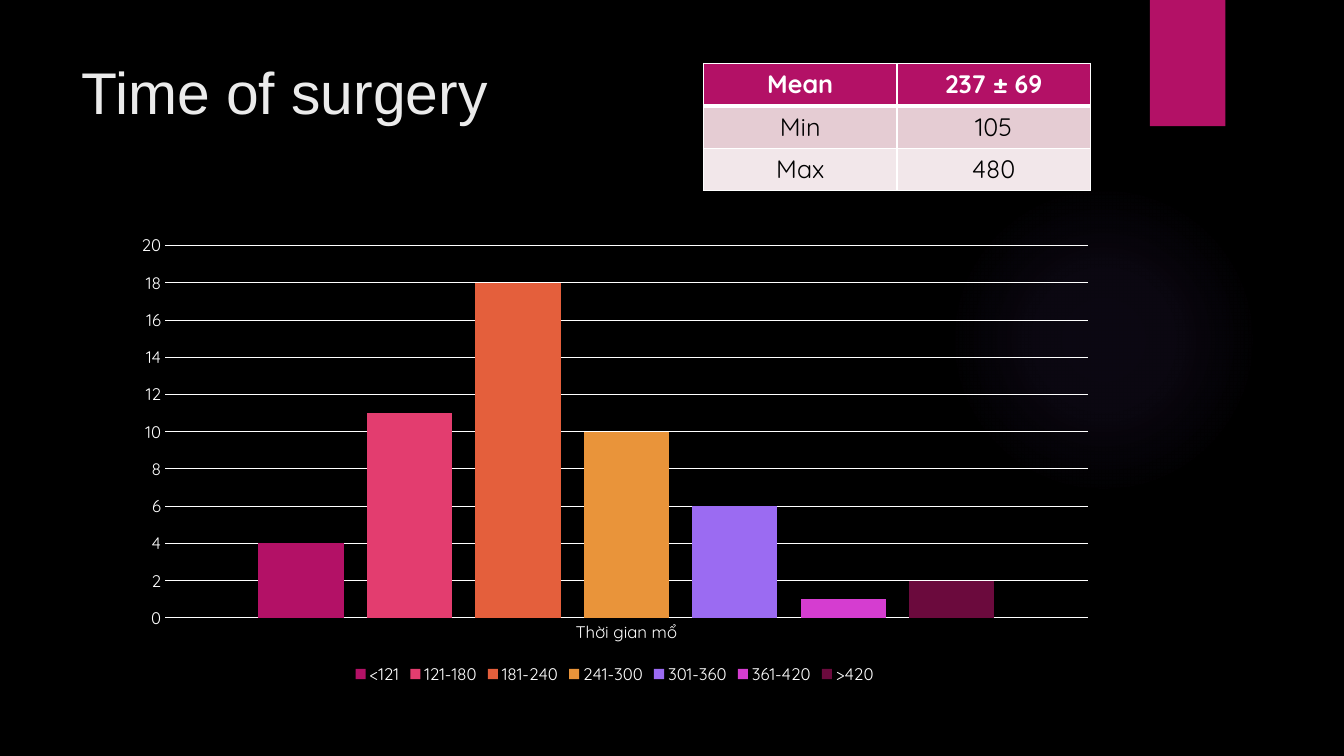
"""Build the slide on time of surgery: title, summary table and column chart."""
from lxml.etree import SubElement
from pptx import Presentation
from pptx.chart.data import CategoryChartData
from pptx.dml.color import RGBColor
from pptx.enum.chart import XL_CHART_TYPE, XL_LEGEND_POSITION, XL_TICK_MARK
from pptx.enum.shapes import MSO_SHAPE
from pptx.enum.text import MSO_ANCHOR, MSO_AUTO_SIZE, PP_ALIGN
from pptx.oxml import parse_xml
from pptx.oxml.ns import nsdecls, qn
from pptx.util import Cm, Pt


class Theme:
    black, white, title = "000000", "FFFFFF", "EBEBEB"
    pink, violet = "B31166", "9B6BF2"
    rows = [pink, "E5CCD3", "F2E7EA"]
    bars = [pink, "E33D6F", "E45F3C", "E9943A", violet, "D53DD0", "6B0A3D"]
    head, body = "Arial", "Quicksand"
    big, mid, small = Pt(42), Pt(18), Pt(12)


def paint(fill, color):
    fill.solid()
    fill.fore_color.rgb = RGBColor.from_string(color)


def style(font, color, **values):
    for key, value in values.items():
        setattr(font, key, value)
    paint(font.fill, color)


deck = Presentation()
deck.slide_width, deck.slide_height = Cm(33.87), Cm(19.05)
slide = deck.slides.add_slide(deck.slide_layouts[5])
shapes = slide.shapes
paint(slide.background.fill, Theme.black)

glow = shapes.add_shape(MSO_SHAPE.OVAL, Cm(23.9), Cm(4.65), Cm(7.82), Cm(7.82))
tab = shapes.add_shape(MSO_SHAPE.RECTANGLE, Cm(28.98), 0, Cm(1.9), Cm(3.18))
for shape in (glow, tab):
    shape.shadow.inherit = False
    shape.line.fill.background()
    paint(shape.fill, Theme.pink)

stops = "".join(
    f'<a:gs pos="{pos}000"><a:srgbClr val="{Theme.violet}">'
    f'<a:alpha val="{alpha}000"/></a:srgbClr></a:gs>'
    for pos, alpha in ((0, 7), (36, 6), (69, 0)))
solid = glow._element.spPr.find(qn("a:solidFill"))
solid.getparent().replace(solid, parse_xml(
    f'<a:gradFill {nsdecls("a")}><a:gsLst>{stops}</a:gsLst><a:path path="circle">'
    '<a:fillToRect l="50000" t="50000" r="50000" b="50000"/></a:path></a:gradFill>'))

title = shapes.title
title.left, title.top, title.width, title.height = Cm(1.8), Cm(1.27), Cm(26.14), Cm(3.89)
title.text = "Time of surgery"
frame = title.text_frame
for key, value in {"word_wrap": True, "auto_size": MSO_AUTO_SIZE.NONE,
                   "vertical_anchor": MSO_ANCHOR.TOP}.items():
    setattr(frame, key, value)
line = frame.paragraphs[0]
line.alignment = PP_ALIGN.LEFT
style(line.runs[0].font, Theme.title, name=Theme.head, size=Theme.big)

facts = [("Mean", "237 ± 69"), ("Min", "105"), ("Max", "480")]
table = shapes.add_table(3, 2, Cm(17.73), Cm(1.6), Cm(9.75), Cm(3.2)).table
for row, pair in enumerate(facts):
    for col, text in enumerate(pair):
        cell = table.cell(row, col)
        cell.text = text
        line = cell.text_frame.paragraphs[0]
        line.alignment = PP_ALIGN.CENTER
        style(line.runs[0].font, Theme.black if row else Theme.white,
              name=Theme.body, size=Theme.mid, bold=row == 0)
        props = cell._tc.get_or_add_tcPr()
        for side in "LRTB":
            thick = (row, side) in ((0, "B"), (1, "T"))
            edge = SubElement(props, qn(f"a:ln{side}"), w=str(Pt(3 if thick else 1)))
            fill = SubElement(edge, qn("a:solidFill"))
            SubElement(fill, qn("a:srgbClr"), val=Theme.white)
        paint(cell.fill, Theme.rows[row])

data = CategoryChartData()
data.categories = ["Thời gian mổ"]
names = ["<121", "121-180", "181-240", "241-300", "301-360", "361-420", ">420"]
for name, count in zip(names, [4, 11, 18, 10, 6, 1, 2]):
    data.add_series(name, [count])
chart = shapes.add_chart(XL_CHART_TYPE.COLUMN_CLUSTERED, Cm(3.07), Cm(5.69),
                         Cm(24.84), Cm(11.66), data).chart
chart.has_title = False
chart.has_legend = True
legend = chart.legend
legend.position = XL_LEGEND_POSITION.BOTTOM
legend.include_in_layout = False
plot = chart.plots[0]
plot.gap_width, plot.overlap, plot.vary_by_categories = 219, -27, False
for series, color in zip(plot.series, Theme.bars):
    paint(series.format.fill, color)

base, scale = chart.category_axis, chart.value_axis
for key, value in {"minimum_scale": 0, "maximum_scale": 20, "major_unit": 2,
                   "has_major_gridlines": True}.items():
    setattr(scale, key, value)
for axis in (base, scale):
    axis.major_tick_mark = axis.minor_tick_mark = XL_TICK_MARK.NONE
for part in (base, scale.major_gridlines):
    part.format.line.width = Pt(0.75)
    paint(part.format.line.fill, Theme.white)
scale.format.line.fill.background()
for font in (chart.font, legend.font, base.tick_labels.font, scale.tick_labels.font):
    style(font, Theme.white, name=Theme.body, size=Theme.small)

deck.save("out.pptx")
